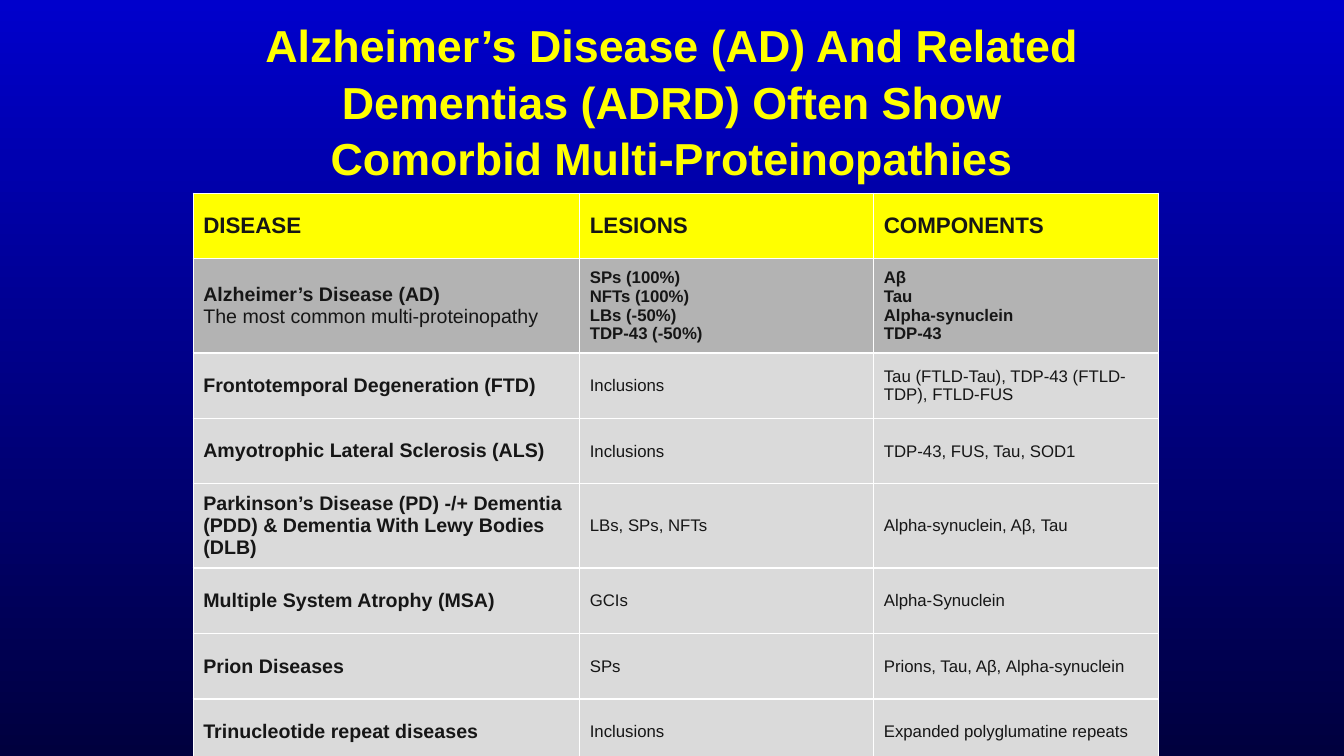
from lxml import etree
from pptx import Presentation
from pptx.dml.color import RGBColor
from pptx.enum.text import MSO_ANCHOR, MSO_AUTO_SIZE, PP_ALIGN
from pptx.oxml.ns import qn
from pptx.util import Cm, Pt

CENTER = PP_ALIGN.CENTER
MIDDLE = MSO_ANCHOR.MIDDLE
FIT_SHAPE = MSO_AUTO_SIZE.SHAPE_TO_FIT_TEXT
COLORS = {
    "sky": "0000CC",
    "night": "00003E",
    "yellow": "FFFF00",
    "ink": "161616",
    "highlight": "B3B3B3",
    "row": "DADADA",
    "border": "FFFFFF",
}
COLUMN_WIDTHS = [9.74, 7.41, 7.18]
ROW_HEIGHT = 1.65
ROWS = [
    ["DISEASE", "LESIONS", "COMPONENTS"],
    ["Alzheimer’s Disease (AD)",
     "SPs (100%)\nNFTs (100%)\nLBs (-50%)\nTDP-43 (-50%)",
     "Aβ\nTau\nAlpha-synuclein\nTDP-43"],
    ["Frontotemporal Degeneration (FTD)", "Inclusions",
     "Tau (FTLD-Tau), TDP-43 (FTLD-TDP), FTLD-FUS"],
    ["Amyotrophic Lateral Sclerosis (ALS)", "Inclusions", "TDP-43, FUS, Tau, SOD1"],
    ["Parkinson’s Disease (PD) -/+ Dementia (PDD) & Dementia With Lewy Bodies (DLB)",
     "LBs, SPs, NFTs", "Alpha-synuclein, Aβ, Tau"],
    ["Multiple System Atrophy (MSA)", "GCIs", "Alpha-Synuclein"],
    ["Prion Diseases", "SPs", "Prions, Tau, Aβ, Alpha-synuclein"],
    ["Trinucleotide repeat diseases", "Inclusions", "Expanded polyglumatine repeats"],
]


def add_text(paragraph, text, size, color, bold):
    run = paragraph.add_run()
    run.text = text
    for name, value in {"name": "Arial", "size": Pt(size), "bold": bold}.items():
        setattr(run.font, name, value)
    run.font.color.rgb = RGBColor.from_string(COLORS[color])


def add_borders(cell):
    properties = cell._tc.get_or_add_tcPr()
    for side in ("lnL", "lnR", "lnT", "lnB"):
        line = etree.SubElement(properties, qn(f"a:{side}"), w=str(Pt(1)))
        fill = etree.SubElement(line, qn("a:solidFill"))
        etree.SubElement(fill, qn("a:srgbClr"), val=COLORS["border"])


presentation = Presentation()
presentation.slide_width = Cm(33.87)
presentation.slide_height = Cm(19.05)
slide = presentation.slides.add_slide(presentation.slide_layouts[5])

# Background
background = slide.background.fill
background.gradient()
background.gradient_angle = 270
for stop, position, color in zip(background.gradient_stops, (0, 1), ("sky", "night")):
    stop.position = position
    stop.color.rgb = RGBColor.from_string(COLORS[color])

# Title
title = slide.shapes.title
title_box = {"left": 5.72, "top": 0.33, "width": 22.43, "height": 4.37}
for name, value in title_box.items():
    setattr(title, name, Cm(value))
frame = title.text_frame
for name, value in {"word_wrap": True, "auto_size": FIT_SHAPE, "vertical_anchor": MIDDLE}.items():
    setattr(frame, name, value)
heading = frame.paragraphs[0]
heading.alignment = CENTER
heading.line_spacing = 1.05
add_text(heading, "Alzheimer’s Disease (AD) And Related Dementias (ADRD) Often Show "
         "Comorbid Multi-Proteinopathies", 32, "yellow", True)

# Disease table
table = slide.shapes.add_table(
    len(ROWS), len(COLUMN_WIDTHS), Cm(4.87), Cm(4.87),
    Cm(sum(COLUMN_WIDTHS)), Cm(ROW_HEIGHT * len(ROWS))).table
for column, width in zip(table.columns, COLUMN_WIDTHS):
    column.width = Cm(width)
for row in table.rows:
    row.height = Cm(ROW_HEIGHT)

for row_index, texts in enumerate(ROWS):
    fill_color = {0: "yellow", 1: "highlight"}.get(row_index, "row")
    for column_index, text in enumerate(texts):
        cell = table.cell(row_index, column_index)
        cell.vertical_anchor = MIDDLE
        cell.margin_top = cell.margin_bottom = Cm(0.17)
        add_borders(cell)
        cell.fill.solid()
        cell.fill.fore_color.rgb = RGBColor.from_string(COLORS[fill_color])
        size = 16 if row_index == 0 else 14 if column_index == 0 else 12
        bold = row_index < 2 or column_index == 0
        for line_index, line in enumerate(text.split("\n")):
            if line_index == 0:
                paragraph = cell.text_frame.paragraphs[0]
            else:
                paragraph = cell.text_frame.add_paragraph()
            add_text(paragraph, line, size, "ink", bold)

alzheimer = table.cell(1, 0).text_frame.paragraphs[0]
alzheimer.add_line_break()
add_text(alzheimer, "The most common multi-proteinopathy", 14, "ink", False)

presentation.save("out.pptx")
